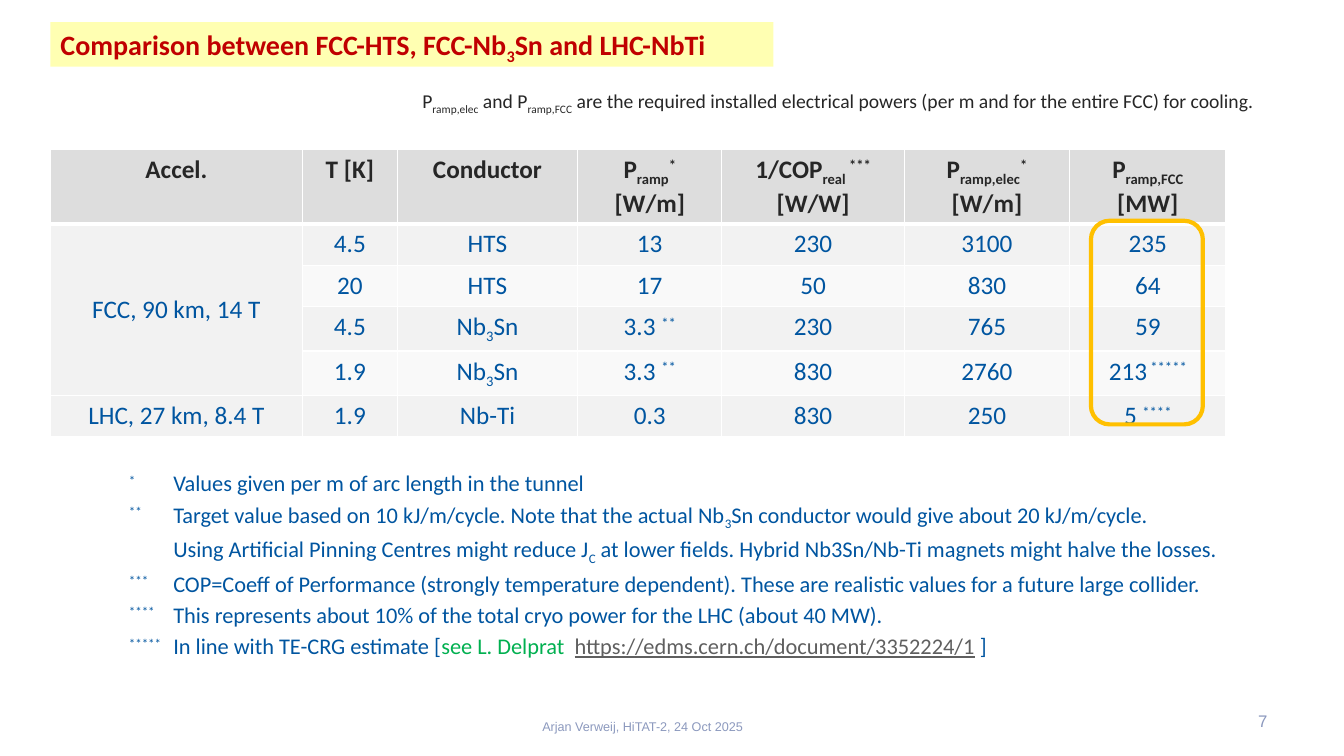
from dataclasses import dataclass

from lxml import etree
from pptx import Presentation
from pptx.dml.color import RGBColor
from pptx.enum.shapes import MSO_SHAPE
from pptx.enum.text import MSO_ANCHOR, PP_ALIGN
from pptx.oxml.ns import qn
from pptx.util import Inches, Pt

LEFT, CENTER, RIGHT = PP_ALIGN.LEFT, PP_ALIGN.CENTER, PP_ALIGN.RIGHT
TOP, MIDDLE = MSO_ANCHOR.TOP, MSO_ANCHOR.MIDDLE
ROUNDED = MSO_SHAPE.ROUNDED_RECTANGLE


@dataclass(frozen=True)
class Theme:
    body_font: str = "Calibri"
    footer_font: str = "Arial"
    title: str = "C00000"
    title_fill: str = "FFFF00"
    dark: str = "262626"
    blue: str = "0055A0"
    green: str = "00B050"
    link: str = "5F5F5F"
    footer: str = "8C99BE"
    header_fill: str = "DDDDDD"
    bands: tuple = ("F2F2F2", "F9F9F9")
    border: str = "FFFFFF"
    highlight: str = "FFC000"
    title_size: int = 20
    table_size: int = 18
    note_size: int = 16
    caption_size: int = 14
    number_size: int = 12
    footer_size: int = 9


THEME = Theme()

# Content: ~x~ is subscript, ^x^ is superscript
TITLE = "Comparison between FCC-HTS, FCC-Nb~3~Sn and LHC-NbTi"
CAPTION = ("P~ramp,elec~ and P~ramp,FCC~ are the required installed electrical powers "
           "(per m and for the entire FCC) for cooling.")
HEADER = [
    ["Accel."], ["T [K]"], ["Conductor"],
    ["P~ramp~^*^", "[W/m]"], ["1/COP~real~^ ***^", "[W/W]"],
    ["P~ramp,elec~^*^", "[W/m]"], ["P~ramp,FCC~", "[MW]"],
]
ROWS = [
    ("FCC, 90 km, 14 T", "4.5", "HTS", "13", "230", "3100", "235"),
    ("", "20", "HTS", "17", "50", "830", "64"),
    ("", "4.5", "Nb~3~Sn", "3.3 ^**^", "230", "765", "59"),
    ("", "1.9", "Nb~3~Sn", "3.3 ^**^", "830", "2760", "213^ *****^"),
    ("LHC, 27 km, 8.4 T", "1.9", "Nb-Ti", "0.3", "830", "250", "5 ^****^"),
]
FCC_ROWS = 4
NOTES = [
    "^*^\tValues given per m of arc length in the tunnel",
    "^**^\tTarget value based on 10 kJ/m/cycle. Note that the actual Nb~3~Sn conductor "
    "would give about 20 kJ/m/cycle.",
    "\tUsing Artificial Pinning Centres might reduce J~C~ at lower fields. "
    "Hybrid Nb3Sn/Nb-Ti magnets might halve the losses.",
    "^***^\tCOP=Coeff of Performance (strongly temperature dependent). "
    "These are realistic values for a future large collider.",
    "^****^\tThis represents about 10% of the total cryo power for the LHC (about 40 MW).",
    ["^*****^\tIn line with TE-CRG estimate [", ("see L. Delprat  ", THEME.green, False),
     ("https://edms.cern.ch/document/3352224/1", THEME.link, True), " ]"],
]
FOOTER = "Arjan Verweij, HiTAT-2, 24 Oct 2025"
SLIDE_NUMBER = "7"

# Layout in inches
TABLE_LEFT, TABLE_TOP, ROW_HEIGHT = 0.5, 1.48, 0.41
COLUMN_WIDTHS = [2.5, 0.94, 1.79, 1.43, 1.81, 1.64, 1.55]
NOTE_INDENT = 0.44
BASELINES = {"~": "-25000", "^": "30000"}


def rgb(value):
    return RGBColor.from_string(value)


def split_baselines(text):
    """Yield (piece, mark), where mark is "~", "^" or empty."""
    piece, mark = "", ""
    for letter in text:
        if letter in BASELINES:
            if piece:
                yield piece, mark
            piece, mark = "", "" if mark else letter
        else:
            piece += letter
    if piece:
        yield piece, mark


def write(frame, lines, *, size, color, font=THEME.body_font, bold=False,
          align=LEFT, anchor=TOP, space_before=0, indent=0):
    frame.word_wrap = True
    frame.vertical_anchor = anchor
    for index, line in enumerate(lines):
        paragraph = frame.paragraphs[0] if index == 0 else frame.add_paragraph()
        paragraph.alignment = align
        if index and space_before:
            paragraph.space_before = Pt(space_before)
        if indent:
            properties = paragraph._p.get_or_add_pPr()
            properties.set("marL", str(Inches(indent)))
            properties.set("indent", str(-Inches(indent)))
        for part in [line] if isinstance(line, str) else line:
            text, run_color, underline = (part, color, False) if isinstance(part, str) else part
            for piece, mark in split_baselines(text):
                run = paragraph.add_run()
                run.text = piece
                run.font.name, run.font.size, run.font.bold = font, Pt(size), bold
                run.font.color.rgb = rgb(run_color)
                if underline:
                    run.font.underline = True
                if mark:
                    run.font._element.set("baseline", BASELINES[mark])


def add_text(slide, box, lines, **text_format):
    shape = slide.shapes.add_textbox(*map(Inches, box))
    write(shape.text_frame, lines, **text_format)


def set_borders(cell, row):
    properties = cell._tc.get_or_add_tcPr()
    for side in "LRTB":
        thick = (row, side) in ((0, "B"), (1, "T"))
        line = etree.SubElement(properties, qn(f"a:ln{side}"), w=str(Pt(3 if thick else 1)))
        fill = etree.SubElement(line, qn("a:solidFill"))
        etree.SubElement(fill, qn("a:srgbClr"), val=THEME.border)


def add_title(slide):
    title = slide.shapes.title
    title.left, title.top, title.width, title.height = map(Inches, (0.5, 0.22, 7.17, 0.44))
    title.fill.solid()
    title.fill.fore_color.rgb = rgb(THEME.title_fill)
    color = title._element.spPr.find(".//" + qn("a:srgbClr"))
    etree.SubElement(color, qn("a:alpha"), val="30000")
    write(title.text_frame, [TITLE], size=THEME.title_size, color=THEME.title, bold=True)


def add_comparison_table(slide):
    cells = [HEADER] + [[[text] for text in row] for row in ROWS]
    table = slide.shapes.add_table(
        len(cells), len(HEADER), Inches(TABLE_LEFT), Inches(TABLE_TOP),
        Inches(sum(COLUMN_WIDTHS)), Inches(ROW_HEIGHT * len(cells))).table
    for column, width in zip(table.columns, COLUMN_WIDTHS):
        column.width = Inches(width)
    for row, contents in enumerate(cells):
        table.rows[row].height = Inches(ROW_HEIGHT)
        for column, lines in enumerate(contents):
            cell = table.cell(row, column)
            set_borders(cell, row)
            cell.fill.solid()
            cell.fill.fore_color.rgb = rgb(THEME.bands[(row - 1) % 2] if row else THEME.header_fill)
            write(cell.text_frame, lines, size=THEME.table_size, align=CENTER,
                  color=THEME.blue if row else THEME.dark, bold=row == 0)
    accelerator = table.cell(1, 0)
    accelerator.merge(table.cell(FCC_ROWS, 0))
    accelerator.vertical_anchor = MIDDLE


def add_highlight(slide):
    shape = slide.shapes.add_shape(ROUNDED, *map(Inches, (10.82, 2.19, 1.11, 2.02)))
    shape.shadow.inherit = False
    shape.fill.background()
    shape.line.color.rgb = rgb(THEME.highlight)
    shape.line.width = Pt(3)


def main():
    presentation = Presentation()
    presentation.slide_width, presentation.slide_height = Inches(13.33), Inches(7.5)
    slide = presentation.slides.add_slide(presentation.slide_layouts[5])

    # Footer
    footer_format = dict(color=THEME.footer, font=THEME.footer_font, anchor=MIDDLE)
    add_text(slide, (11.94, 6.95, 0.73, 0.4), [SLIDE_NUMBER], size=THEME.number_size,
             align=RIGHT, **footer_format)
    add_text(slide, (5.28, 7.07, 2.55, 0.28), [FOOTER], size=THEME.footer_size, **footer_format)

    # Title, table and notes
    add_title(slide)
    add_comparison_table(slide)
    add_text(slide, (1.18, 4.61, 11.65, 1.93), NOTES, size=THEME.note_size,
             color=THEME.blue, space_before=3, indent=NOTE_INDENT)

    # Highlighted column and caption
    add_highlight(slide)
    add_text(slide, (4.09, 0.83, 8.93, 0.34), [CAPTION], size=THEME.caption_size, color=THEME.dark)

    presentation.save("out.pptx")


if __name__ == "__main__":
    main()
